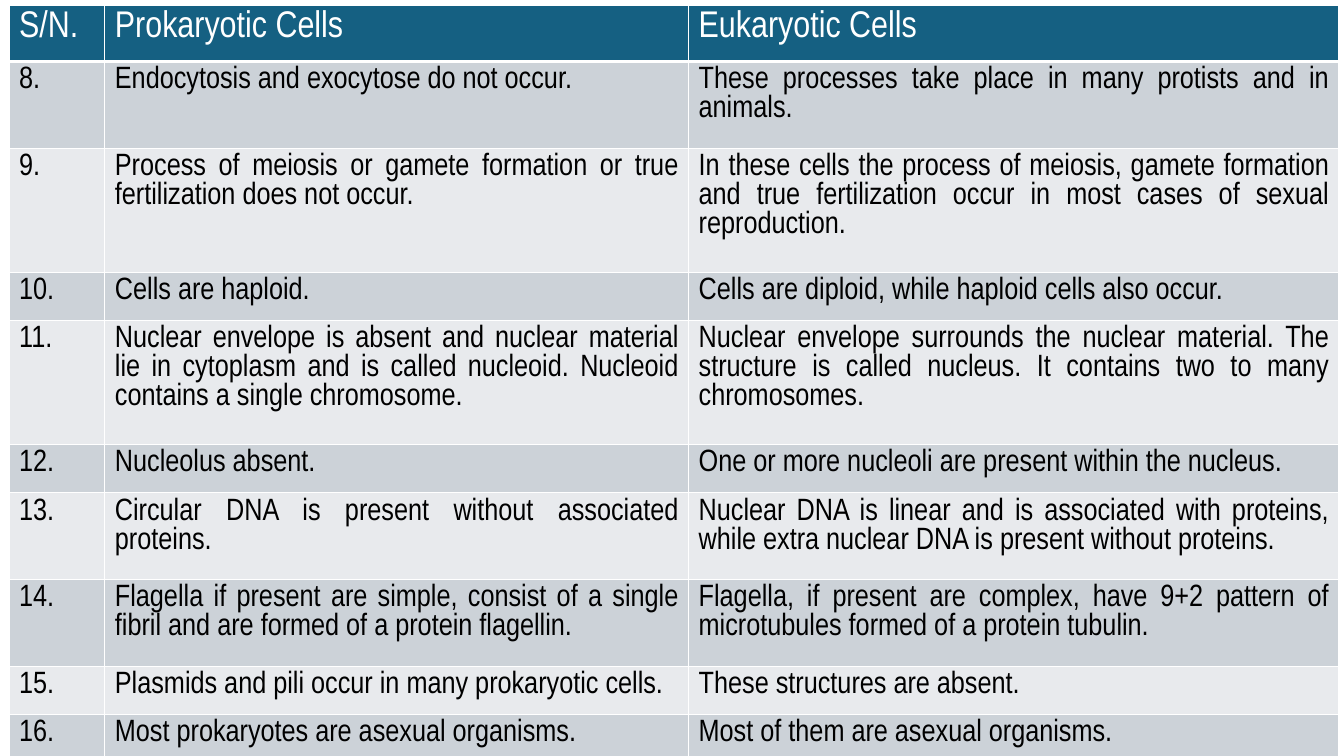
from lxml.etree import SubElement
from pptx import Presentation
from pptx.dml.color import RGBColor
from pptx.enum.text import PP_ALIGN
from pptx.oxml.ns import qn
from pptx.util import Inches, Pt

FONT = "Arial Narrow"
COLORS = {
    "head": "156082",
    "dark": "CCD2D8",
    "light": "E8EAED",
    "white": "FFFFFF",
    "black": "000000",
}
WIDTHS = [0.95, 5.79, 6.45]
HEIGHTS = {1: 0.48, 2: 0.86, 3: 1.23}  # row height by lines of text
HEAD = ["S/N.", "Prokaryotic Cells", "Eukaryotic Cells"]
FIRST = 8  # number of the first row

# Lines of text, prokaryotic cells, eukaryotic cells
ROWS = [
    (2, "Endocytosis and exocytose do not occur.",
     "These processes take place in many protists and in animals."),
    (3, "Process of meiosis or gamete formation or true fertilization "
        "does not occur.",
     "In these cells the process of meiosis, gamete formation and true "
     "fertilization occur in most cases of sexual reproduction."),
    (1, "Cells are haploid.",
     "Cells are diploid, while haploid cells also occur."),
    (3, "Nuclear envelope is absent and nuclear material lie in cytoplasm "
        "and is called nucleoid. Nucleoid contains a single chromosome.",
     "Nuclear envelope surrounds the nuclear material. The structure is "
     "called nucleus. It contains two to many chromosomes."),
    (1, "Nucleolus absent.",
     "One or more nucleoli are present within the nucleus."),
    (2, "Circular DNA is present without associated proteins.",
     "Nuclear DNA is linear and is associated with proteins, while extra "
     "nuclear DNA is present without proteins."),
    (2, "Flagella if present are simple, consist of a single fibril and are "
        "formed of a protein flagellin.",
     "Flagella, if present are complex, have 9+2 pattern of microtubules "
     "formed of a protein tubulin."),
    (1, "Plasmids and pili occur in many prokaryotic cells.",
     "These structures are absent."),
    (1, "Most prokaryotes are asexual organisms.",
     "Most of them are asexual organisms."),
]


def rgb(name):
    return RGBColor.from_string(COLORS[name])


def put_text(frame, text, size=22, color="black", align=PP_ALIGN.JUSTIFY):
    para = frame.paragraphs[0]
    para.alignment = align
    run = para.add_run()
    run.text = text
    run.font.name = FONT
    run.font.size = Pt(size)
    run.font.bold = False
    run.font.color.rgb = rgb(color)


def add_edges(cell, base=1):
    props = cell._tc.get_or_add_tcPr()
    for side, width in zip("LRTB", (1, 1, 1, base)):
        line = SubElement(props, qn(f"a:ln{side}"), w=str(Pt(width)))
        fill = SubElement(line, qn("a:solidFill"))
        SubElement(fill, qn("a:srgbClr"), val=COLORS["white"])


def fill_row(table, index, height, texts, fill, base=1, **style):
    table.rows[index].height = Inches(height)
    for cell, text in zip(table.rows[index].cells, texts):
        add_edges(cell, base)
        cell.fill.solid()
        cell.fill.fore_color.rgb = rgb(fill)
        put_text(cell.text_frame, text, **style)


def add_grid(slide):
    frame = slide.shapes.add_table(
        len(ROWS) + 1, len(WIDTHS),
        Inches(0.09), Inches(0.05), Inches(sum(WIDTHS)), Inches(7.5))
    table = frame.table
    for column, width in zip(table.columns, WIDTHS):
        column.width = Inches(width)

    # Header row
    fill_row(table, 0, 0.56, HEAD, "head", base=3, size=26.5, color="white")

    # Numbered rows in alternating bands
    for index, (lines, *texts) in enumerate(ROWS):
        band = "light" if index % 2 else "dark"
        fill_row(table, index + 1, HEIGHTS[lines],
                 [f"{FIRST + index}.", *texts], band)


def main():
    deck = Presentation()
    deck.slide_width = Inches(13.33)
    deck.slide_height = Inches(7.5)
    slide = deck.slides.add_slide(deck.slide_layouts[6])
    add_grid(slide)
    deck.save("out.pptx")


if __name__ == "__main__":
    main()
